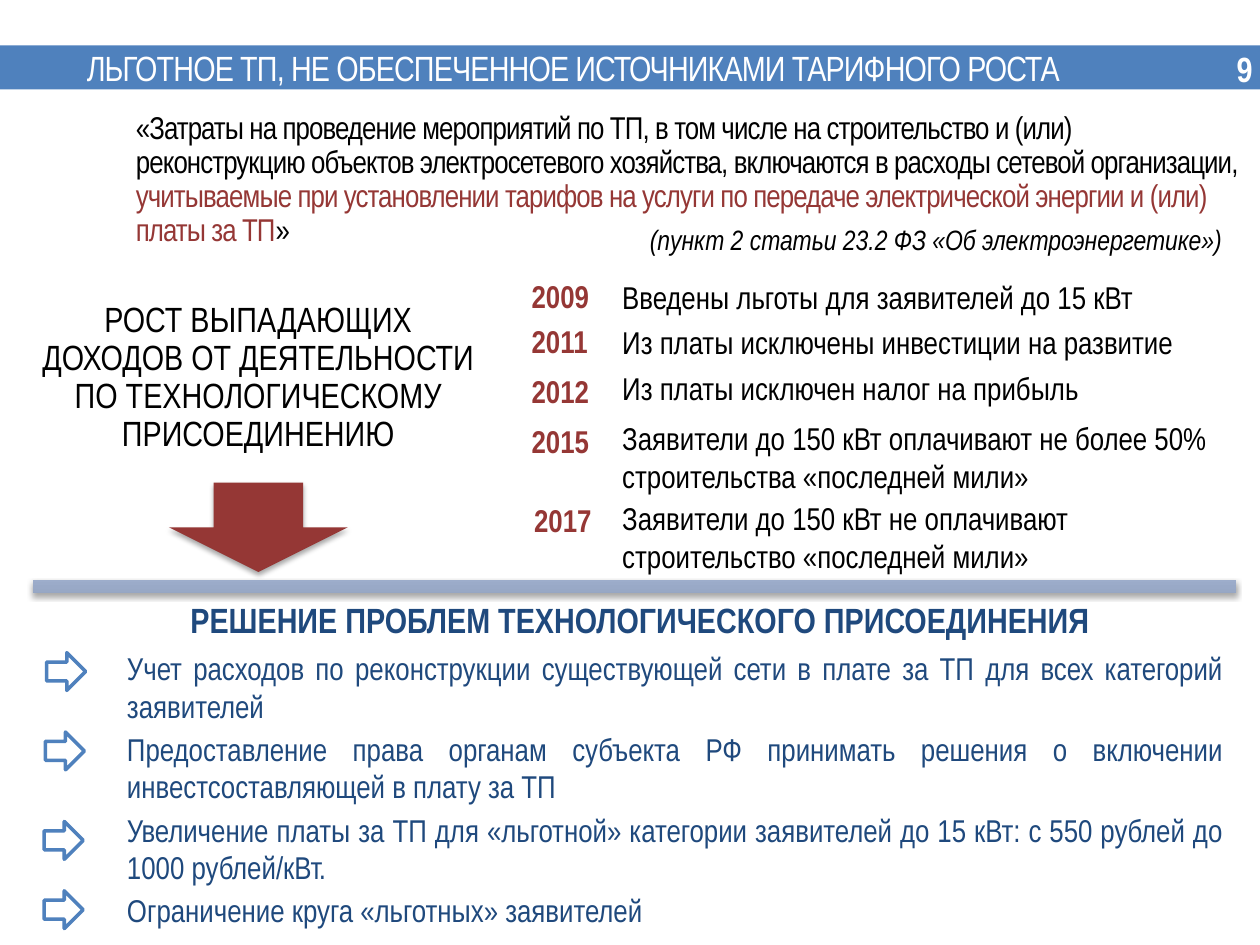
from copy import deepcopy
from dataclasses import dataclass

from pptx import Presentation
from pptx import util as u
from pptx.dml.color import RGBColor
from pptx.enum import shapes, text
from pptx.oxml import parse_xml
from pptx.oxml.ns import nsdecls

FONT = "Arial Narrow"
BLUE, NAVY, RED, BLACK, WHITE = "4F81BD", "1F497D", "953735", "000000", "FFFFFF"
LEFT, CENTER, RIGHT, JUSTIFY = (
    text.PP_ALIGN.LEFT, text.PP_ALIGN.CENTER, text.PP_ALIGN.RIGHT, text.PP_ALIGN.JUSTIFY)


@dataclass
class Milestone:
    year: str
    year_left: float
    year_top: float
    note: str
    note_top: float
    note_height: float
    line_spacing: float = 1.0


MILESTONES = [
    Milestone("2009", 4.06, 2.05, "Введены льготы для заявителей до 15 кВт", 2.16, 0.4),
    Milestone("2011", 4.06, 2.41, "Из платы исключены инвестиции на развитие", 2.57, 0.34, 0.8),
    Milestone("2012", 4.06, 2.81, "Из платы исключен налог на прибыль", 2.96, 0.32, 0.7),
    Milestone("2015", 4.06, 3.2,
              "Заявители до 150 кВт оплачивают не более 50%\nстроительства «последней мили»",
              3.28, 0.71),
    Milestone("2017", 4.08, 3.83,
              "Заявители до 150 кВт не оплачивают строительство «последней мили»", 3.91, 0.71),
]

SOLUTIONS = [
    "Учет расходов по реконструкции существующей сети в плате за ТП для всех категорий заявителей",
    "Предоставление права органам субъекта РФ принимать решения о включении "
    "инвестсоставляющей в плату за ТП",
    "Увеличение платы за ТП для «льготной» категории заявителей до 15 кВт: "
    "с 550 рублей до 1000 рублей/кВт.",
    "Ограничение круга «льготных» заявителей",
]
MARKERS = [(0.37, 5.18), (0.36, 5.81), (0.35, 6.52), (0.35, 7.07)]


def color(value: str) -> RGBColor:
    return RGBColor.from_string(value)


def add_span(para, content: str, size=18, ink=BLACK, bold=False, italic=False, tracking=0):
    span = para.add_run()
    span.text = content
    span.font.name = FONT
    span.font.size = u.Pt(size)
    span.font.bold = bold
    span.font.italic = italic
    span.font.color.rgb = color(ink)
    if tracking:
        span._r.get_or_add_rPr().set("spc", str(round(tracking * 100)))


def add_text(page, content: str, left, top, width, height, align=LEFT, spacing=1.0,
             after=0, padded=False, wrap=True, **style):
    box = page.shapes.add_textbox(*map(u.Inches, (left, top, width, height)))
    frame = box.text_frame
    frame.word_wrap = wrap
    if padded:
        frame.vertical_anchor = text.MSO_ANCHOR.MIDDLE
        frame.margin_left = frame.margin_right = u.Inches(0.16)
        frame.margin_top = frame.margin_bottom = u.Inches(0.16)
    else:
        frame.auto_size = text.MSO_AUTO_SIZE.SHAPE_TO_FIT_TEXT
    for index, line in enumerate(content.split("\n")):
        para = frame.add_paragraph() if index else frame.paragraphs[0]
        para.alignment = align
        para.line_spacing = spacing
        para.space_after = u.Pt(after)
        add_span(para, line, **style)
    return box


def add_figure(page, kind, left, top, width, height, fill=None, line=None):
    figure = page.shapes.add_shape(kind, *map(u.Inches, (left, top, width, height)))
    figure.shadow.inherit = False
    if fill:
        figure.fill.solid()
        figure.fill.fore_color.rgb = color(fill)
    else:
        figure.fill.background()
    if line:
        figure.line.color.rgb = color(line)
        figure.line.width = u.Pt(2)
    else:
        figure.line.fill.background()
    return figure


def add_shadow(figure) -> None:
    effects = figure._element.spPr.find("{*}effectLst")
    effects.append(parse_xml(
        f'<a:outerShdw {nsdecls("a")} blurRad="{u.Pt(3.1)}" dist="{u.Pt(1.8)}" dir="5400000" '
        'rotWithShape="0"><a:srgbClr val="000000"><a:alpha val="35000"/></a:srgbClr>'
        '</a:outerShdw>'))


def add_divider(page) -> None:
    divider = add_figure(page, shapes.MSO_SHAPE.MATH_MINUS, -1.46, 4.23, 12.99, 0.85)
    divider.adjustments[0] = 0.117
    divider.fill.gradient()
    divider.fill.gradient_angle = 90
    stops = divider._element.spPr.find("{*}gradFill/{*}gsLst")
    stops.append(deepcopy(stops[0]))
    shades = [(0, "818FA8"), (0.8, "A8B9DA"), (1, "A7BADC")]
    for stop, (position, shade) in zip(divider.fill.gradient_stops, shades):
        stop.position = position
        stop.color.rgb = color(shade)
    add_shadow(divider)


def add_milestone(page, item: Milestone) -> None:
    add_text(page, item.note, 4.84, item.note_top, 5.16, item.note_height,
             spacing=item.line_spacing)
    add_text(page, item.year, item.year_left, item.year_top, 0.94, 0.63,
             spacing=0.9, padded=True, ink=RED, bold=True)


def add_header(page) -> None:
    add_figure(page, shapes.MSO_SHAPE.RECTANGLE, 0, 0.36, 10, 0.35, fill=BLUE)
    add_text(page, "ЛЬГОТНОЕ ТП, НЕ ОБЕСПЕЧЕННОЕ ИСТОЧНИКАМИ ТАРИФНОГО РОСТА",
             0.59, 0.32, 8.58, 0.44, size=20, ink=WHITE, tracking=-0.5)
    add_text(page, "9", 9.71, 0.33, 0.33, 0.44, align=RIGHT, wrap=False,
             size=20, ink=WHITE, bold=True)


def add_quote(page) -> None:
    quote = add_text(
        page,
        "«Затраты на проведение мероприятий по ТП, в том числе на строительство и (или)\n"
        "реконструкцию объектов электросетевого хозяйства, включаются в расходы "
        "сетевой организации, ",
        0.98, 0.84, 9.02, 1.46, spacing=0.9, tracking=-0.5)
    para = quote.text_frame.paragraphs[-1]
    add_span(para, "учитываемые при установлении тарифов на услуги по передаче "
                   "электрической энергии и (или) платы за ТП", ink=RED, tracking=-0.5)
    add_span(para, "»", tracking=-0.5)
    add_text(page, "(пункт 2 статьи 23.2 ФЗ «Об электроэнергетике»)",
             5.06, 1.75, 4.9, 0.34, spacing=0.9, size=16, italic=True)


def main() -> None:
    deck = Presentation()
    deck.slide_width, deck.slide_height = u.Inches(10), u.Inches(7.5)
    page = deck.slides.add_slide(deck.slide_layouts[6])

    add_header(page)
    add_text(page, "РОСТ ВЫПАДАЮЩИХ ДОХОДОВ ОТ ДЕЯТЕЛЬНОСТИ ПО ТЕХНОЛОГИЧЕСКОМУ ПРИСОЕДИНЕНИЮ",
             0.12, 2.33, 3.86, 1.34, align=CENTER, spacing=0.9, padded=True, size=20)
    for item in MILESTONES:
        add_milestone(page, item)
    add_shadow(add_figure(page, shapes.MSO_SHAPE.DOWN_ARROW, 1.34, 3.83, 1.42, 0.71, fill=RED))
    add_divider(page)
    add_text(page, "РЕШЕНИЕ ПРОБЛЕМ ТЕХНОЛОГИЧЕСКОГО ПРИСОЕДИНЕНИЯ",
             0.04, 4.62, 10.08, 0.63, align=CENTER, spacing=0.9, padded=True,
             size=20, ink=NAVY, bold=True)
    add_text(page, "\n".join(SOLUTIONS), 0.91, 5.1, 8.9, 2.35, align=JUSTIFY, after=3, ink=NAVY)
    for left, top in MARKERS:
        add_figure(page, shapes.MSO_SHAPE.RIGHT_ARROW, left, top, 0.31, 0.3, line=BLUE)
    add_quote(page)

    deck.save("out.pptx")


if __name__ == "__main__":
    main()
